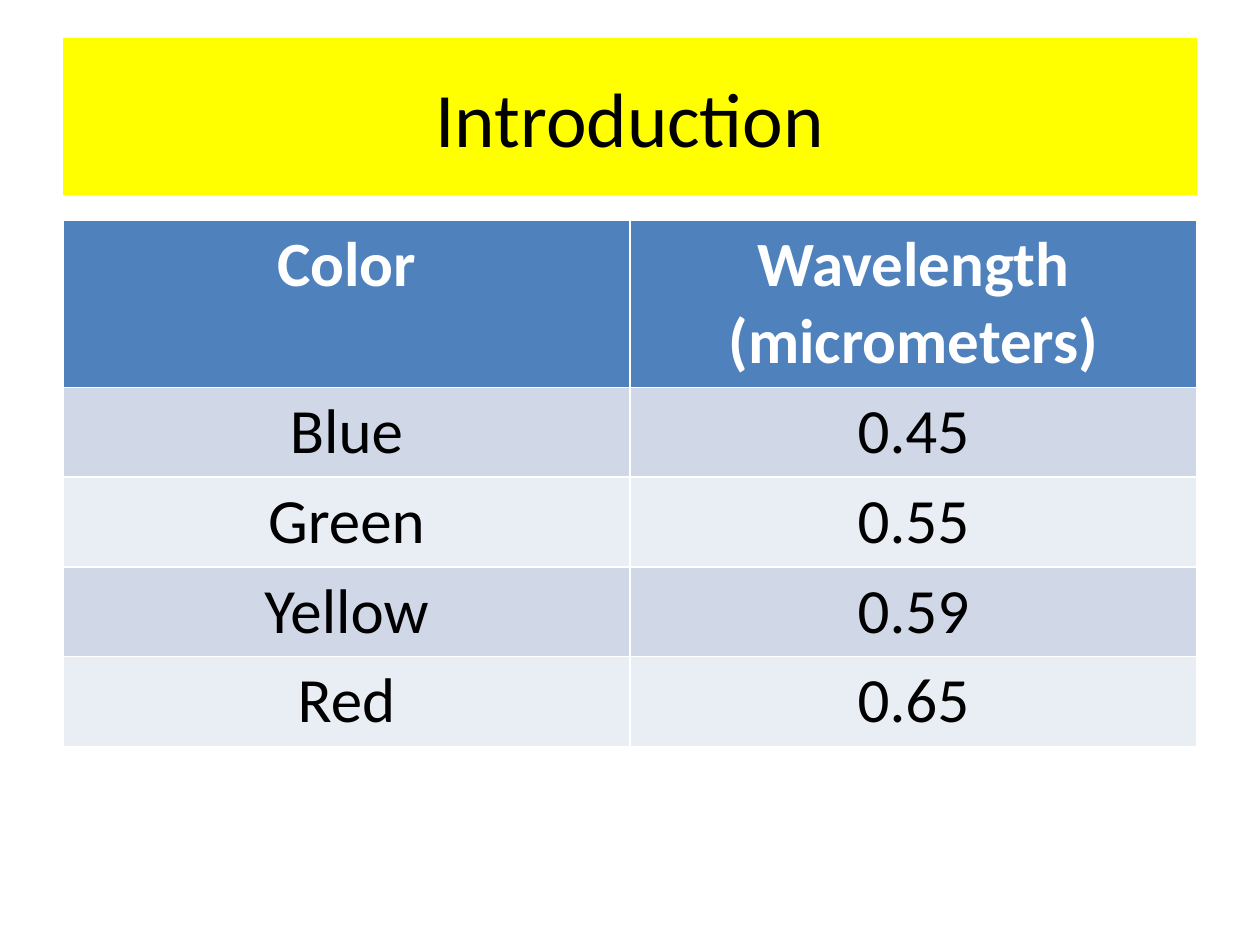
"""Build the Introduction slide with a table of colour wavelengths."""
from pptx import Presentation
from pptx.dml.color import RGBColor
from pptx.enum.text import MSO_ANCHOR, PP_ALIGN
from pptx.util import Inches, Pt

YELLOW = RGBColor(0xFF, 0xFF, 0x00)
BLACK = RGBColor(0x00, 0x00, 0x00)
WHITE = RGBColor(0xFF, 0xFF, 0xFF)
BLUE = RGBColor(0x4F, 0x81, 0xBD)
BANDS = [RGBColor(0xD0, 0xD8, 0xE8), RGBColor(0xE9, 0xED, 0xF4)]

ROWS = [
    ("Color", "Wavelength\n(micrometers)"),
    ("Blue", "0.45"),
    ("Green", "0.55"),
    ("Yellow", "0.59"),
    ("Red", "0.65"),
]


def format_text(tf, color, **font):
    for p in tf.paragraphs:
        p.alignment = PP_ALIGN.CENTER
        for r in p.runs:
            r.font.color.rgb = color
            for name, value in {"name": "Calibri", **font}.items():
                setattr(r.font, name, value)


prs = Presentation()
prs.slide_width, prs.slide_height = Inches(10), Inches(7.5)
s = prs.slides.add_slide(prs.slide_layouts[5])

title = s.shapes.title
box = {"left": 0.5, "top": 0.3, "width": 9, "height": 1.25}
for name, value in box.items():
    setattr(title, name, Inches(value))
title.fill.solid()
title.fill.fore_color.rgb = YELLOW
title.text_frame.text = "Introduction"
title.text_frame.vertical_anchor = MSO_ANCHOR.MIDDLE
format_text(title.text_frame, BLACK, size=Pt(44))

table = s.shapes.add_table(
    len(ROWS), 2, Inches(0.5), Inches(1.75), Inches(9), Inches(4.15)
).table
for i, row in enumerate(ROWS):
    header = i == 0
    table.rows[i].height = Inches(1.31 if header else 0.71)
    for j, text in enumerate(row):
        cell = table.cell(i, j)
        cell.text = text
        cell.fill.solid()
        cell.fill.fore_color.rgb = BLUE if header else BANDS[(i - 1) % 2]
        format_text(cell.text_frame, WHITE if header else BLACK,
                    size=Pt(36), bold=header)

prs.save("out.pptx")
